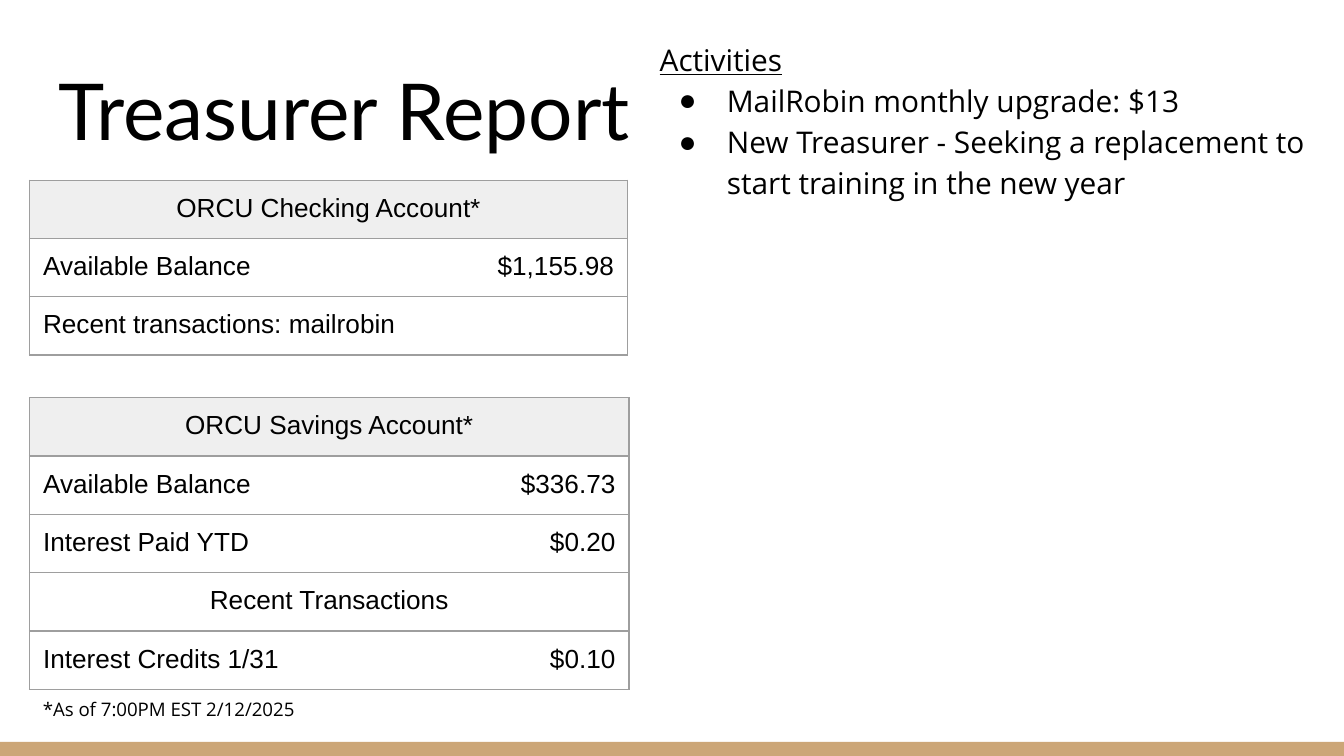
from dataclasses import dataclass
from typing import Optional

from lxml import etree
from pptx import Presentation
from pptx.dml.color import RGBColor
from pptx.enum import shapes, text
from pptx.oxml import ns
from pptx.util import Inches, Pt


@dataclass(frozen=True)
class Theme:
    ink: str = "000000"
    rule: str = "9E9E9E"
    head: str = "EFEFEF"
    band: str = "CCA677"
    title: int = 42
    body: int = 16
    cell: int = 14
    note: int = 10
    line: float = 0.75


@dataclass(frozen=True)
class Row:
    label: str
    value: Optional[str] = None  # None merges the row
    center: bool = False
    head: bool = False
    height: float = 0.43


@dataclass(frozen=True)
class Account:
    top: float
    cols: tuple[float, float]
    rows: tuple[Row, ...]


@dataclass(frozen=True)
class Item:
    words: str
    bullet: bool = True


THEME = Theme()
LEFT = 0.22
SIDE = Inches(3.28)
SNUG = 0.11  # grows to fit its text
PAD = Inches(0.1)

ACCOUNTS = (
    Account(2.96, (3.37, 1.09), (
        Row("ORCU Savings Account*", center=True, head=True, height=SNUG),
        Row("Available Balance", "$336.73"),
        Row("Interest Paid YTD", "$0.20"),
        Row("Recent Transactions", center=True),
        Row("Interest Credits 1/31", "$0.10", height=SNUG),
    )),
    Account(1.34, (2.94, 1.51), (
        Row("ORCU Checking Account*", center=True, head=True),
        Row("Available Balance", "$1,155.98"),
        Row("Recent transactions: mailrobin"),
    )),
)

ITEMS = (
    Item("Activities", bullet=False),
    Item("MailRobin monthly upgrade: $13"),
    Item("New Treasurer - Seeking a replacement to start training in the new year"),
)


def add_run(para, words: str, size: int, face: str, under: bool = False) -> None:
    run = para.add_run()
    run.text = words
    font = run.font
    font.size, font.name = Pt(size), face
    font.color.rgb = RGBColor.from_string(THEME.ink)
    if under:
        font.underline = True


def add_box(slide, left: float, top: float, width: float, height: float):
    box = slide.shapes.add_textbox(*map(Inches, (left, top, width, height)))
    frame = box.text_frame
    frame.word_wrap = True
    frame.margin_left = frame.margin_right = PAD
    frame.margin_top = frame.margin_bottom = PAD
    return frame


def set_rule(cell, sides: str) -> None:
    props = cell._tc.get_or_add_tcPr()
    for side in "LRTB":
        line = etree.SubElement(props, ns.qn(f"a:ln{side}"), w=str(Pt(THEME.line)))
        if side in sides:
            fill = etree.SubElement(line, ns.qn("a:solidFill"))
            etree.SubElement(fill, ns.qn("a:srgbClr"), val=THEME.rule)
        else:
            etree.SubElement(line, ns.qn("a:noFill"))


def fill_cell(cell, row: Row, sides: str) -> None:
    set_rule(cell, sides)
    if row.head:
        cell.fill.solid()
        cell.fill.fore_color.rgb = RGBColor.from_string(THEME.head)
    else:
        cell.fill.background()
    cell.margin_left = cell.margin_right = PAD
    cell.margin_top = cell.margin_bottom = PAD


def add_account(slide, acct: Account) -> None:
    frame = slide.shapes.add_table(
        len(acct.rows), 2, Inches(LEFT), Inches(acct.top), SIDE, SIDE)
    table = frame.table
    table.first_row = table.horz_banding = False
    for col, width in zip(table.columns, acct.cols):
        col.width = Inches(width)
    for num, row in enumerate(acct.rows):
        table.rows[num].height = Inches(row.height)
        first, last = table.cell(num, 0), table.cell(num, 1)
        whole = row.value is None
        fill_cell(first, row, "LRTB" if whole else "LTB")
        fill_cell(last, row, "RTB")
        if whole:
            first.merge(last)
        else:
            para = last.text_frame.paragraphs[0]
            para.alignment = text.PP_ALIGN.RIGHT
            add_run(para, row.value, THEME.cell, "Arial")
        para = first.text_frame.paragraphs[0]
        if row.center:
            para.alignment = text.PP_ALIGN.CENTER
        add_run(para, row.label, THEME.cell, "Arial")
    frame.width = frame.height = SIDE


def set_bullet(para) -> None:
    props = para._p.get_or_add_pPr()
    props.set("marL", str(Inches(0.5)))
    props.set("indent", str(Inches(-0.36)))
    color = etree.SubElement(props, ns.qn("a:buClr"))
    etree.SubElement(color, ns.qn("a:srgbClr"), val=THEME.ink)
    etree.SubElement(props, ns.qn("a:buFont"), typeface="Arial")
    etree.SubElement(props, ns.qn("a:buChar"), char="●")


def add_list(slide, items: tuple[Item, ...]) -> None:
    frame = add_box(slide, 4.81, 0.17, 5.19, 5.29)
    for num, item in enumerate(items):
        para = frame.add_paragraph() if num else frame.paragraphs[0]
        para.line_spacing = 1.15
        if item.bullet:
            set_bullet(para)
        add_run(para, item.words, THEME.body, "Open Sans", not item.bullet)


def main() -> None:
    deck = Presentation()
    deck.slide_width = Inches(10)
    deck.slide_height = deck.slide_width * 9 // 16
    slide = deck.slides.add_slide(deck.slide_layouts[6])

    # Bottom band
    top = Inches(5.52)
    band = slide.shapes.add_shape(
        shapes.MSO_SHAPE.RECTANGLE, 0, top, deck.slide_width, deck.slide_height - top)
    band.shadow.inherit = False
    band.fill.solid()
    band.fill.fore_color.rgb = RGBColor.from_string(THEME.band)
    band.line.fill.background()

    # Title
    frame = add_box(slide, 0.34, 0.35, 9.32, 0.91)
    frame.vertical_anchor = text.MSO_ANCHOR.BOTTOM
    add_run(frame.paragraphs[0], "Treasurer Report", THEME.title, "Lato")

    # Account tables
    for acct in ACCOUNTS:
        add_account(slide, acct)

    # Footnote
    frame = add_box(slide, LEFT, 5.11, 3.55, 0.37)
    add_run(frame.paragraphs[0], "*As of 7:00PM EST 2/12/2025", THEME.note, "Open Sans")

    # Activities
    add_list(slide, ITEMS)

    deck.save("out.pptx")


if __name__ == "__main__":
    main()
